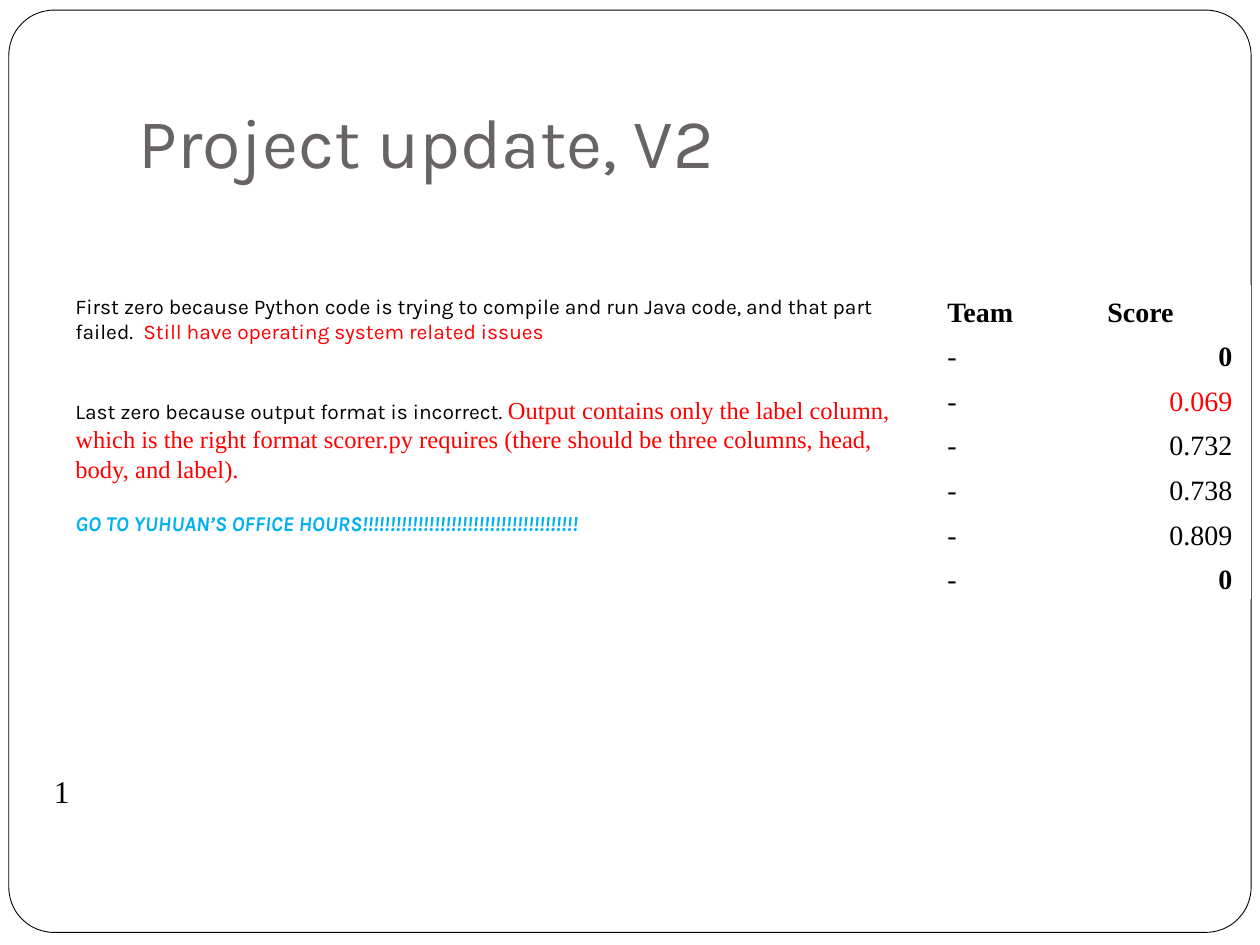
from pptx import Presentation
from pptx.dml.color import RGBColor
from pptx.enum.shapes import MSO_SHAPE
from pptx.enum.text import MSO_ANCHOR, PP_ALIGN
from pptx.util import Inches, Pt

SANS, SERIF = "Karla", "Times New Roman"
BLACK, RED, BLUE, GRAY, WHITE = "000000", "FF0000", "00B0F0", "696464", "FFFFFF"

SCORES = ["0", "0.069", "0.732", "0.738", "0.809", "0"]


def color(value):
    return RGBColor.from_string(value)


def style_font(font, name, size, value, bold=False, italic=False):
    font.name = name
    font.size = Pt(size)
    font.color.rgb = color(value)
    font.bold = bold
    font.italic = italic


def add_frame(slide):
    shape = slide.shapes.add_shape(
        MSO_SHAPE.ROUNDED_RECTANGLE, Inches(0.07), Inches(0.08), Inches(9.86), Inches(7.32))
    shape.adjustments[0] = 0.049
    shape.shadow.inherit = False
    shape.fill.solid()
    shape.fill.fore_color.rgb = color(WHITE)
    shape.line.color.rgb = color(BLACK)
    shape.line.width = Pt(0.5)


def add_text_box(slide, left, top, width, height, anchor=MSO_ANCHOR.TOP):
    box = slide.shapes.add_textbox(Inches(left), Inches(top), Inches(width), Inches(height))
    frame = box.text_frame
    frame.word_wrap = True
    frame.vertical_anchor = anchor
    return frame


def add_line(slide, position, text, name, size, value, anchor=MSO_ANCHOR.TOP):
    frame = add_text_box(slide, *position, anchor)
    paragraph = frame.paragraphs[0]
    paragraph.text = text
    style_font(paragraph.font, name, size, value)
    return frame


def add_run(paragraph, text, name, size, value):
    run = paragraph.add_run()
    run.text = text
    style_font(run.font, name, size, value)


def add_notes_on_zeros(slide):
    frame = add_text_box(slide, 0.5, 1.72, 6.71, 3.57)
    frame.margin_top = Inches(0.61)

    first = frame.paragraphs[0]
    add_run(first, "First zero because Python code is trying to compile and run Java code, "
            "and that part failed.  ", SANS, 12, BLACK)
    add_run(first, "Still have operating system related issues", SANS, 12, RED)

    last = frame.add_paragraph()
    last.space_before = Pt(29)
    add_run(last, "Last zero because output format is incorrect. ", SANS, 12, BLACK)
    add_run(last, "Output contains only the label column, which is the right format scorer.py "
            "requires (there should be three columns, head, body, and label).", SERIF, 14, RED)

    reminder = frame.add_paragraph()
    reminder.space_before = Pt(15.5)
    reminder.text = "GO TO YUHUAN’S OFFICE HOURS" + "!" * 39
    style_font(reminder.font, SANS, 12, BLUE, bold=True, italic=True)


def fill_cell(cell, text, value=BLACK, bold=False, align=PP_ALIGN.LEFT):
    cell.fill.background()
    cell.vertical_anchor = MSO_ANCHOR.BOTTOM
    cell.margin_left = cell.margin_right = Inches(0.14)
    cell.margin_top = cell.margin_bottom = Inches(0.02)
    paragraph = cell.text_frame.paragraphs[0]
    paragraph.text = text
    paragraph.alignment = align
    style_font(paragraph.font, SERIF, 16, value, bold)


def add_score_table(slide):
    table = slide.shapes.add_table(
        len(SCORES) + 1, 2, Inches(7.38), Inches(2.27), Inches(2.54), Inches(2.48)).table
    table.first_row = False
    table.horz_banding = False

    for column, heading in enumerate(["Team", "Score"]):
        fill_cell(table.cell(0, column), heading, bold=True)
    for row, score in enumerate(SCORES, start=1):
        fill_cell(table.cell(row, 0), "-")
        fill_cell(table.cell(row, 1), score, RED if score == "0.069" else BLACK,
                  bold=score == "0", align=PP_ALIGN.RIGHT)


def main():
    presentation = Presentation()
    presentation.slide_width = Inches(10)
    presentation.slide_height = Inches(7.5)
    slide = presentation.slides.add_slide(presentation.slide_layouts[6])

    # Frame and title
    add_frame(slide)
    title = add_line(slide, (1, 0.3, 8.5, 1.25), "Project update, V2", SANS, 40, GRAY,
                     MSO_ANCHOR.BOTTOM)
    title.margin_bottom = Inches(0.1)

    # Scores, slide number and explanations
    add_score_table(slide)
    add_line(slide, (0.33, 6.08, 2.17, 0.38), "1", SERIF, 18, BLACK)
    add_notes_on_zeros(slide)

    presentation.save("out.pptx")


if __name__ == "__main__":
    main()
